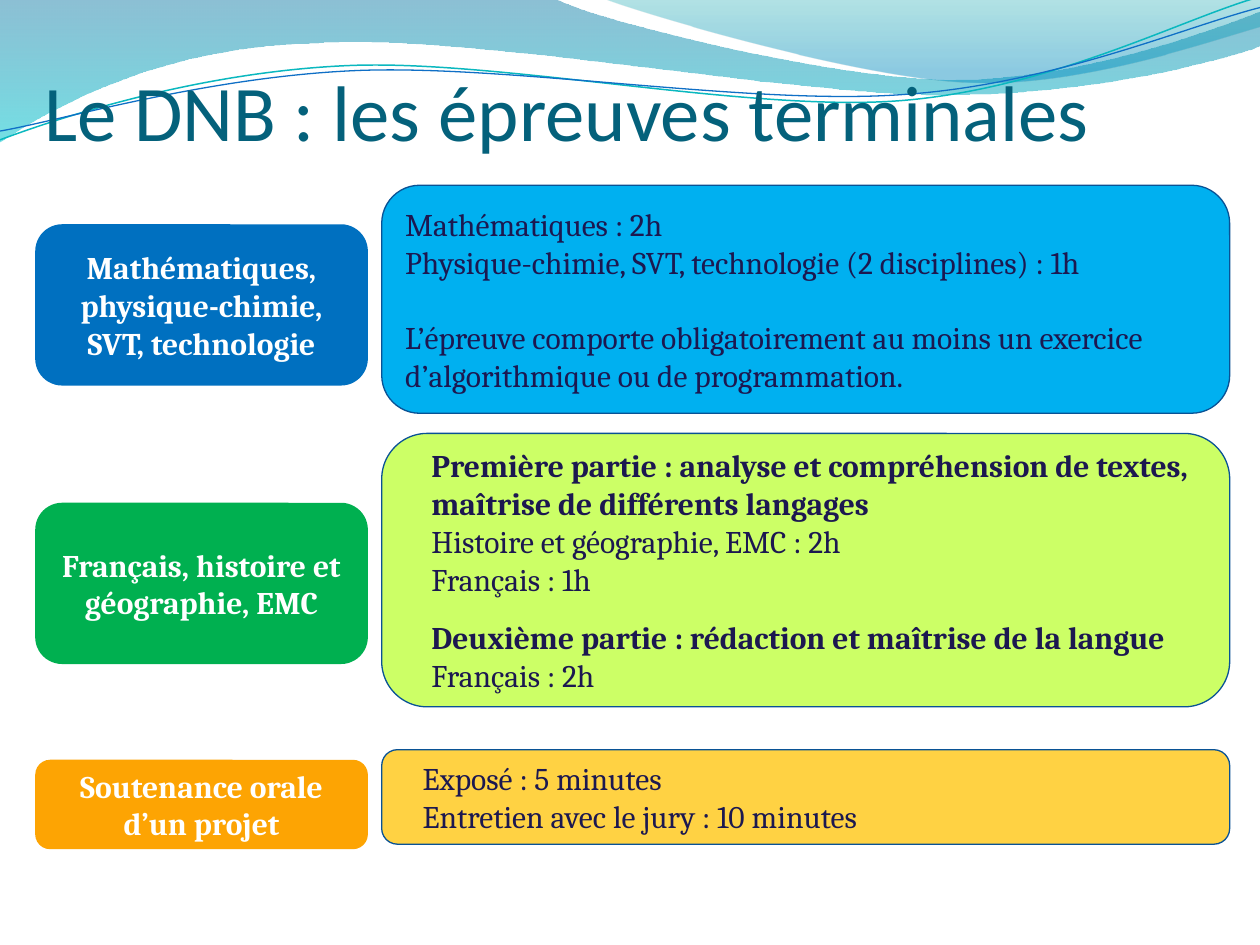
from math import cos, radians, sin

from lxml import etree
from pptx import Presentation
from pptx.dml.color import RGBColor
from pptx.enum.shapes import MSO_SHAPE as Shape
from pptx.enum.text import MSO_ANCHOR as Anchor, PP_ALIGN as Align
from pptx.oxml.ns import qn
from pptx.util import Inches, Pt

WHITE = RGBColor(0xFF, 0xFF, 0xFF)
TITLE_TEAL = RGBColor(0x04, 0x61, 0x7B)
INK = RGBColor(0x1C, 0x18, 0x50)
OUTLINE = RGBColor(0x09, 0x52, 0x95)
BLUE = RGBColor(0x00, 0x70, 0xC0)
SKY = RGBColor(0x00, 0xB0, 0xF0)
GREEN = RGBColor(0x00, 0xB0, 0x50)
LIME = RGBColor(0xCC, 0xFF, 0x66)
ORANGE = RGBColor(0xFD, 0xA4, 0x03)
YELLOW = RGBColor(0xFF, 0xD2, 0x43)
LINE_TEAL = RGBColor(0x0A, 0xB8, 0xBF)
LINE_BLUE = RGBColor(0x0F, 0x6F, 0xC6)

# Gradient stops: position, colour, opacity in percent
LEFT_GRADIENT = [(0, RGBColor(0x00, 0x74, 0xA1), 45), (1, RGBColor(0x00, 0xC6, 0xCF), 55)]
RIGHT_GRADIENT = [(0, RGBColor(0x00, 0xA1, 0xA9), 30), (0.8, RGBColor(0x00, 0x8B, 0xBF), 45)]

# Outlines: a pair is a straight step, six numbers are a Bezier curve
LEFT_WAVE = [(0, 0), (4.4, -0.01), (4.76, 0.17, 6.64, 0.63, 7.58, 0.63),
             (8.53, 0.63, 9.58, 0.26, 10, 0.09), (10.01, 0.36),
             (9.83, 0.44, 8.7, 0.76, 7.46, 0.75), (6.22, 0.75, 3.82, 0.28, 2.57, 0.34),
             (1.29, 0.36, 0.46, 0.83, -0.01, 1.13), (0, 0)]
RIGHT_WAVE = [(4.79, -0.01), (5.09, 0.11, 6.82, 0.62, 7.69, 0.65),
              (8.56, 0.69, 9.61, 0.32, 10, 0.21), (10, 0), (4.79, -0.01)]
TEAL_CURVE = [(0, 1.11), (0.48, 0.93, 1.58, 0.57, 2.77, 0.52),
              (3.95, 0.47, 5.93, 0.89, 7.13, 0.8), (8.33, 0.71, 9.38, 0.15, 9.98, -0.02)]
BLUE_CURVE = [(0, 1.04), (0.47, 0.96, 1.64, 0.61, 2.83, 0.56),
              (4.03, 0.51, 5.97, 0.84, 7.17, 0.75), (8.36, 0.67, 9.41, 0.21, 10, 0.06)]
CURVE_TILT = -2.7
CURVE_CENTER = (4.99, 0.58)

# Columns: left edge, width
LABEL_COLUMN = (0.28, 2.64)
DETAIL_COLUMN = (3.03, 6.73)

# Labels: text, top, height, colour
LABELS = [
    ("Soutenance orale d’un projet", 6.03, 0.71, ORANGE),
    ("Français, histoire et géographie, EMC", 3.99, 1.28, GREEN),
    ("Mathématiques, physique-chimie, SVT, technologie", 1.78, 1.28, BLUE),
]

# Details: top, height, colour, indent, lines of (text, bold, space before)
DETAILS = [
    (3.44, 2.17, LIME, 0.19, [
        ("Première partie : analyse et compréhension de textes, "
         "maîtrise de différents langages", True, 0),
        ("Histoire et géographie, EMC : 2h", False, 0),
        ("Français : 1h", False, 0),
        ("Deuxième partie : rédaction et maîtrise de la langue", True, 12),
        ("Français : 2h", False, 0)]),
    (5.95, 0.75, YELLOW, 0.19, [
        ("Exposé : 5 minutes", False, 0),
        ("Entretien avec le jury : 10 minutes", False, 0)]),
    (1.47, 1.81, SKY, 0, [
        ("Mathématiques : 2h", False, 0),
        ("Physique-chimie, SVT, technologie (2 disciplines) : 1h", False, 0),
        ("L’épreuve comporte obligatoirement au moins un exercice "
         "d’algorithmique ou de programmation.", False, 21.5)]),
]


def turn(point, degrees):
    """Turn a point around the centre of the header curves."""
    angle = radians(degrees)
    dx, dy = point[0] - CURVE_CENTER[0], point[1] - CURVE_CENTER[1]
    return (CURVE_CENTER[0] + dx * cos(angle) - dy * sin(angle),
            CURVE_CENTER[1] + dx * sin(angle) + dy * cos(angle))


def add_outline(slide, outline, tilt=0, close=False):
    points = [part[i:i + 2] for part in outline for i in range(0, len(part), 2)]
    start, *others = [tuple(Inches(v) for v in turn(point, -tilt)) for point in points]
    builder = slide.shapes.build_freeform(*start)
    builder.add_line_segments(others, close=close)
    shape = builder.convert_to_shape()
    shape.shadow.inherit = False
    shape.rotation = tilt

    # Join each three steps of a curve into one Bezier segment
    steps = iter(list(shape._element.iter(qn("a:lnTo"))))
    for part in outline[1:]:
        first = next(steps)
        if len(part) == 6:
            first.tag = qn("a:cubicBezTo")
            for step in (next(steps), next(steps)):
                first.append(step[0])
                step.getparent().remove(step)
    return shape


def add_wave(slide, outline, gradient):
    wave = add_outline(slide, outline, close=True)
    wave.line.fill.background()
    wave.fill.gradient()
    wave.fill.gradient_angle = 270
    for stop, (position, color, _) in zip(wave.fill.gradient_stops, gradient):
        stop.position = position
        stop.color.rgb = color
    colors = wave._element.spPr.iter(qn("a:srgbClr"))
    for color_element, (_, _, opacity) in zip(colors, gradient):
        etree.SubElement(color_element, qn("a:alpha")).set("val", str(opacity * 1000))


def add_curve(slide, outline, color, width):
    curve = add_outline(slide, outline, CURVE_TILT)
    curve.fill.background()
    curve.line.color.rgb = color
    curve.line.width = Pt(width)


def style_text(paragraph, font_name, size, color, bold=False):
    font = paragraph.runs[0].font
    font.name, font.size, font.bold = font_name, Pt(size), bold
    font.color.rgb = color


def add_title(slide, text):
    title = slide.shapes.add_textbox(Inches(0.35), 0, Inches(9), Inches(1.25))
    frame = title.text_frame
    frame.word_wrap = True
    frame.vertical_anchor = Anchor.BOTTOM
    frame.margin_left = frame.margin_right = frame.margin_bottom = 0
    frame.text = text
    style_text(frame.paragraphs[0], "Calibri", 45, TITLE_TEAL)


def add_card(slide, column, top, height, color):
    left, width = column
    card = slide.shapes.add_shape(Shape.ROUNDED_RECTANGLE, Inches(left), Inches(top),
                                  Inches(width), Inches(height))
    card.shadow.inherit = False
    card.fill.solid()
    card.fill.fore_color.rgb = color
    card.text_frame.word_wrap = True
    card.text_frame.vertical_anchor = Anchor.MIDDLE
    return card


def add_label(slide, text, top, height, color):
    label = add_card(slide, LABEL_COLUMN, top, height, color)
    label.line.fill.background()
    label.text_frame.text = text
    paragraph = label.text_frame.paragraphs[0]
    paragraph.alignment = Align.CENTER
    style_text(paragraph, "Cambria", 18, WHITE, True)


def add_details(slide, top, height, color, indent, lines):
    details = add_card(slide, DETAIL_COLUMN, top, height, color)
    details.line.color.rgb = OUTLINE
    details.line.width = Pt(0.75)
    frame = details.text_frame
    frame.text = "\n".join(text for text, _, _ in lines)
    for paragraph, (_, bold, space_before) in zip(frame.paragraphs, lines):
        paragraph.alignment = Align.LEFT
        paragraph.space_before = Pt(space_before)
        paragraph._p.get_or_add_pPr().set("marL", str(Inches(indent)))
        style_text(paragraph, "Cambria", 18, INK, bold)


def main():
    deck = Presentation()
    deck.slide_width, deck.slide_height = Inches(10), Inches(7.5)
    slide = deck.slides.add_slide(deck.slide_layouts[6])

    # Header waves
    add_wave(slide, LEFT_WAVE, LEFT_GRADIENT)
    add_wave(slide, RIGHT_WAVE, RIGHT_GRADIENT)
    add_curve(slide, TEAL_CURVE, LINE_TEAL, 0.85)
    add_curve(slide, BLUE_CURVE, LINE_BLUE, 0.75)

    # Title and exams
    add_title(slide, "Le DNB : les épreuves terminales")
    for label in LABELS:
        add_label(slide, *label)
    for details in DETAILS:
        add_details(slide, *details)

    deck.save("out.pptx")


if __name__ == "__main__":
    main()
